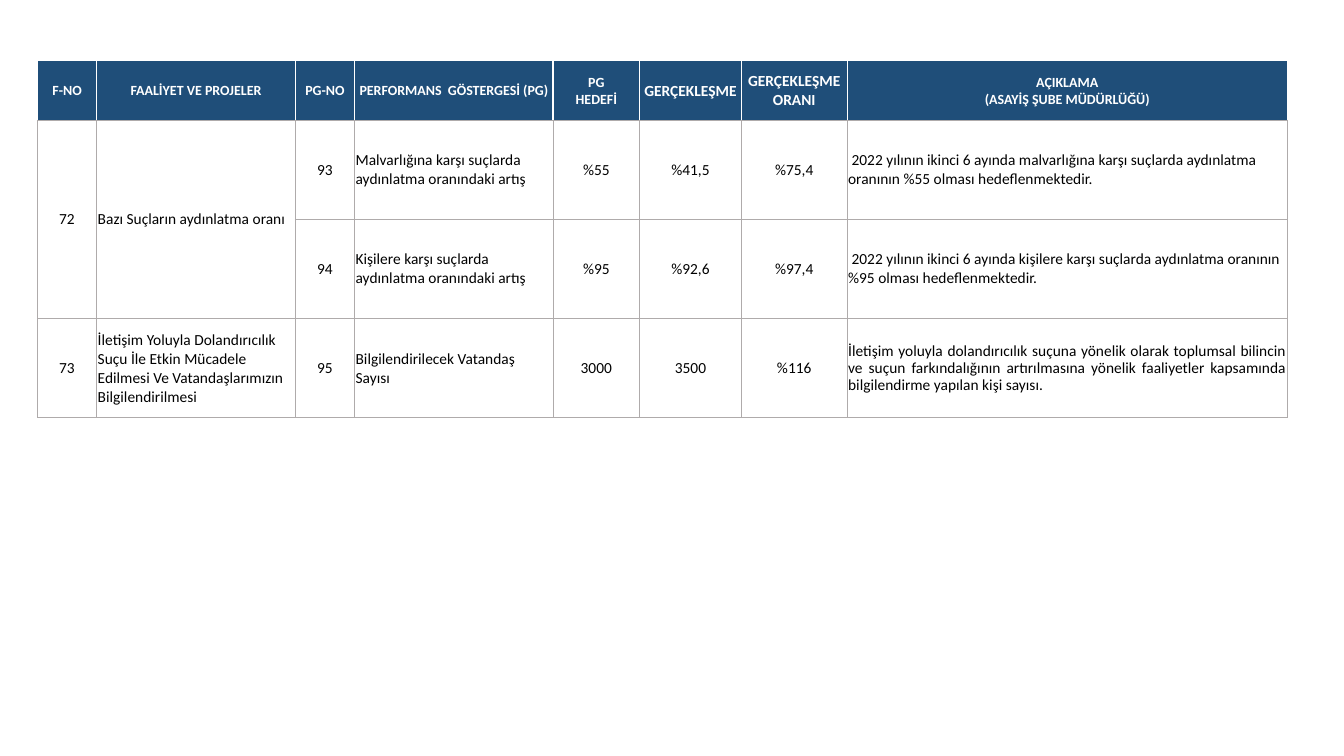
from lxml.etree import SubElement
from pptx import Presentation
from pptx.dml.color import RGBColor
from pptx.enum.text import MSO_ANCHOR, PP_ALIGN
from pptx.oxml.ns import qn
from pptx.util import Inches, Pt

NAVY, WHITE, BLACK, GRAY = "1F4E79", "FFFFFF", "000000", "AFABAB"
COLUMN_WIDTHS = [0.59, 1.97, 0.59, 1.97, 0.86, 1.01, 1.05, 4.37]
ROW_HEIGHTS = [0.59, 0.98, 0.98, 0.98]
HEADINGS = [
    "F-NO", "FAALİYET VE PROJELER", "PG-NO", "PERFORMANS  GÖSTERGESİ (PG)",
    "PG\vHEDEFİ", "GERÇEKLEŞME", "GERÇEKLEŞME ORANI",
    "AÇIKLAMA\n(ASAYİŞ ŞUBE MÜDÜRLÜĞÜ)",
]
INDICATORS = [
    ["72", "Bazı Suçların aydınlatma oranı", "93",
     "Malvarlığına karşı suçlarda aydınlatma oranındaki artış",
     "%55", "%41,5", "%75,4",
     " 2022 yılının ikinci 6 ayında malvarlığına karşı suçlarda aydınlatma "
     "oranının %55 olması hedeflenmektedir."],
    ["", "", "94", "Kişilere karşı suçlarda aydınlatma oranındaki artış",
     "%95", "%92,6", "%97,4",
     " 2022 yılının ikinci 6 ayında kişilere karşı suçlarda aydınlatma "
     "oranının %95 olması hedeflenmektedir."],
    ["73", "İletişim Yoluyla Dolandırıcılık Suçu İle Etkin Mücadele Edilmesi "
     "Ve Vatandaşlarımızın Bilgilendirilmesi", "95",
     "Bilgilendirilecek Vatandaş Sayısı", "3000", "3500", "%116",
     "İletişim yoluyla dolandırıcılık suçuna yönelik olarak toplumsal bilincin "
     "ve suçun farkındalığının artırılmasına yönelik faaliyetler kapsamında "
     "bilgilendirme yapılan kişi sayısı."],
]
LEFT_COLUMNS = (1, 3, 7)
RESULT_COLUMNS = (4, 5, 6)
LARGE_HEADING_COLUMNS = (5, 6)


def color(value):
    return RGBColor.from_string(value)


def set_borders(cell, borders):
    properties = cell._tc.get_or_add_tcPr()
    for side in "LRTB":
        value, width = borders[side]
        line = SubElement(properties, qn(f"a:ln{side}"), w=str(Pt(width)))
        fill = SubElement(line, qn("a:solidFill"))
        SubElement(fill, qn("a:srgbClr"), val=value)


def write_cell(cell, text, size, text_color, bold, alignment, side_margin):
    cell.vertical_anchor = MSO_ANCHOR.MIDDLE
    cell.margin_left = cell.margin_right = Inches(side_margin)
    cell.margin_top, cell.margin_bottom = Inches(0.01), 0
    cell.text_frame.text = text
    for paragraph in cell.text_frame.paragraphs:
        paragraph.alignment = alignment
        paragraph.font.size = Pt(size)
        for run in paragraph.runs:
            run.font.name = "Calibri"
            run.font.size = Pt(size)
            run.font.bold = bold
            run.font.color.rgb = color(text_color)


def format_heading(cell, column, text):
    size = 11 if column in LARGE_HEADING_COLUMNS else 10
    write_cell(cell, text, size, WHITE, True, PP_ALIGN.CENTER, 0.01)
    set_borders(cell, {**dict.fromkeys("LRT", (WHITE, 1)), "B": (GRAY, 0.25)})
    cell.fill.solid()
    cell.fill.fore_color.rgb = color(NAVY)


def format_indicator(cell, column, text):
    alignment = PP_ALIGN.LEFT if column in LEFT_COLUMNS else PP_ALIGN.CENTER
    side_margin = 0.08 if column in RESULT_COLUMNS else 0.01
    write_cell(cell, text, 11, BLACK, False, alignment, side_margin)
    last_column = len(COLUMN_WIDTHS) - 1
    set_borders(cell, {
        "L": (GRAY, 0.25 if column == 0 else 0.5),
        "R": (GRAY, 0.25 if column == last_column else 0.5),
        "T": (GRAY, 0.25),
        "B": (GRAY, 0.25),
    })
    cell.fill.background()


def add_performance_table(slide, left, top, width, height):
    table = slide.shapes.add_table(
        len(ROW_HEIGHTS), len(COLUMN_WIDTHS),
        Inches(left), Inches(top), Inches(width), Inches(height)).table
    table.first_row = table.horz_banding = False
    for column, share in zip(table.columns, COLUMN_WIDTHS):
        column.width = Inches(width * share / sum(COLUMN_WIDTHS))
    for row, share in zip(table.rows, ROW_HEIGHTS):
        row.height = Inches(height * share / sum(ROW_HEIGHTS))
    for column, heading in enumerate(HEADINGS):
        format_heading(table.cell(0, column), column, heading)
    for row, indicator in enumerate(INDICATORS, start=1):
        for column, text in enumerate(indicator):
            format_indicator(table.cell(row, column), column, text)
    for column in (0, 1):
        table.cell(1, column).merge(table.cell(2, column))
    closing_note = table.cell(3, 7).text_frame.paragraphs[0]
    closing_note.alignment = PP_ALIGN.JUSTIFY
    closing_note.line_spacing = 0.9


def main():
    presentation = Presentation()
    presentation.slide_width = Inches(13.33)
    presentation.slide_height = Inches(7.5)
    slide = presentation.slides.add_slide(presentation.slide_layouts[6])
    add_performance_table(slide, 0.37, 0.6, 12.4, 3.54)
    presentation.save("out.pptx")


if __name__ == "__main__":
    main()
